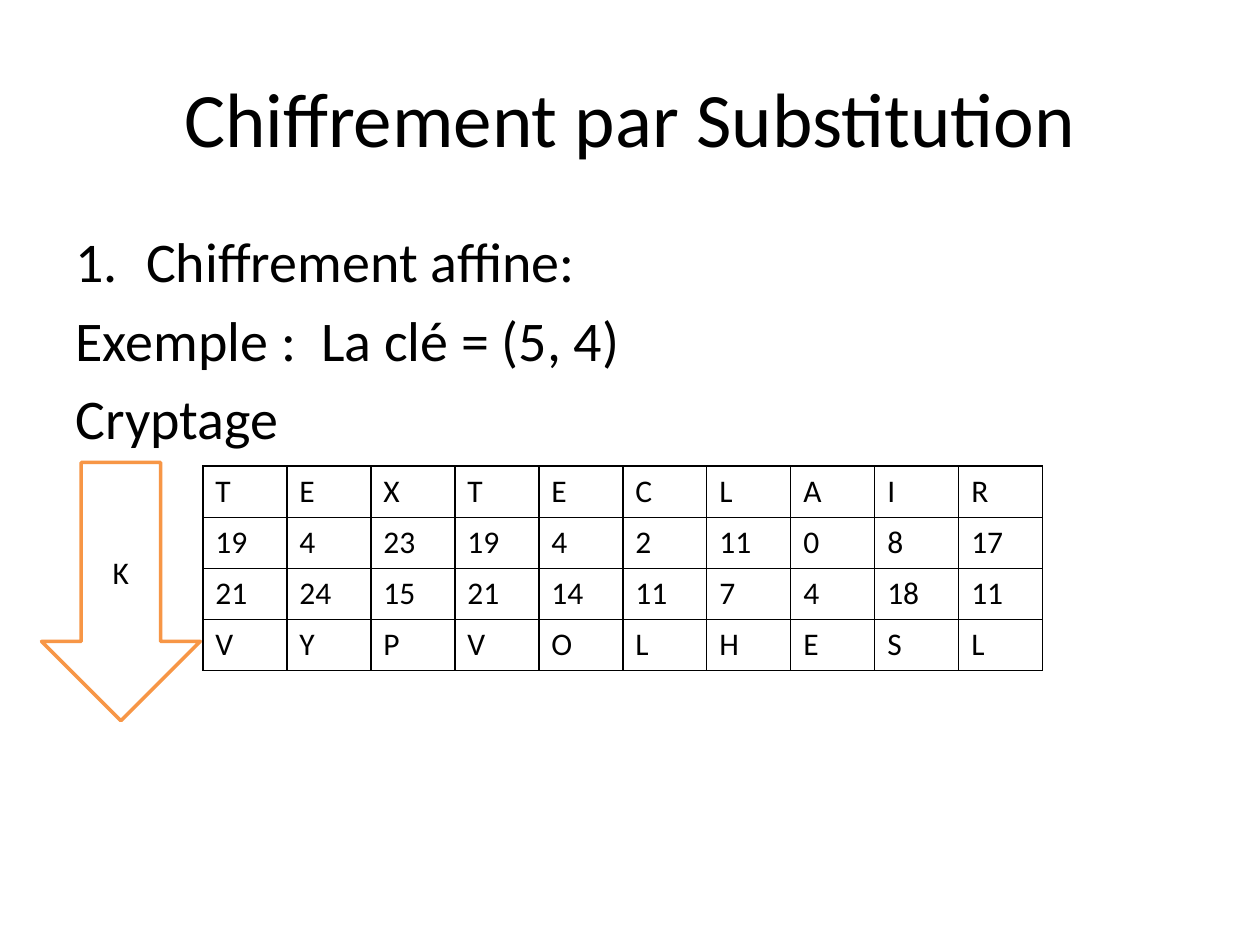
import pptx
import pptx.util
import pptx.dml.color
import pptx.enum.shapes
import pptx.enum.text
import pptx.oxml.ns
import lxml.etree

BLACK = pptx.dml.color.RGBColor(0x00, 0x00, 0x00)
WHITE = pptx.dml.color.RGBColor(0xFF, 0xFF, 0xFF)
ORANGE = pptx.dml.color.RGBColor(0xF7, 0x96, 0x46)
ALIGN = pptx.enum.text.PP_ALIGN
MIDDLE = pptx.enum.text.MSO_ANCHOR.MIDDLE
LINES = [("Chiffrement affine:", True), ("Exemple :  La clé = (5, 4)", False), ("Cryptage", False)]
ROWS = [
    "T E X T E C L A I R".split(),
    "19 4 23 19 4 2 11 0 8 17".split(),
    "21 24 15 21 14 11 7 4 18 11".split(),
    "V Y P V O L H E S L".split(),
]


def add(root, tag, **attrs):
    return lxml.etree.SubElement(root, pptx.oxml.ns.qn(tag), attrs)


def write(par, text, size=18, color=BLACK, face="Calibri", align=ALIGN.LEFT):
    par.text = text
    par.alignment = align
    par.font.size = pptx.util.Pt(size)
    par.font.name = face
    par.font.color.rgb = color


class Deck:
    """Hold the style and the current slide, placing things by shares of its size."""

    def __init__(self, width, height):
        self.file = pptx.Presentation()
        self.file.slide_width = pptx.util.Inches(width)
        self.file.slide_height = pptx.util.Inches(height)
        self.slide = self.file.slides.add_slide(self.file.slide_layouts[1])

    def box(self, left, top, width, height):
        wide, high = self.file.slide_width, self.file.slide_height
        return int(left * wide), int(top * high), int(width * wide), int(height * high)

    def place(self, shape, area):
        shape.left, shape.top, shape.width, shape.height = self.box(*area)

    def title(self, text, area):
        shape = self.slide.shapes.title
        self.place(shape, area)
        shape.text_frame.vertical_anchor = MIDDLE
        write(shape.text_frame.paragraphs[0], text, size=44, align=ALIGN.CENTER)

    def body(self, lines, area):
        shape = self.slide.placeholders[1]
        self.place(shape, area)
        frame = shape.text_frame
        for rank, (text, count) in enumerate(lines):
            par = frame.add_paragraph() if rank else frame.paragraphs[0]
            props = par._p.get_or_add_pPr()
            dent = pptx.util.Inches(0.56) if count else 0
            props.set("marL", str(dent))
            props.set("indent", str(-dent))
            if count:
                add(props, "a:buFont", typeface="+mj-lt")
                add(props, "a:buAutoNum", type="arabicPeriod")
            else:
                add(props, "a:buNone")
            write(par, text, size=32)
            if not rank:
                par.space_before = pptx.util.Pt(0)

    def table(self, rows, area):
        left, top, width, height = self.box(*area)
        high, wide = len(rows), len(rows[0])
        table = self.slide.shapes.add_table(high, wide, left, top, width, height).table
        table.first_row = table.horz_banding = False
        for col in table.columns:
            col.width = width // wide
        for row, texts in zip(table.rows, rows):
            row.height = height // high
            for cell, text in zip(row.cells, texts):
                write(cell.text_frame.paragraphs[0], text)
                self.edge(cell)
                cell.fill.background()

    def edge(self, cell):
        props = cell._tc.get_or_add_tcPr()
        for side in "LRTB":
            line = add(props, "a:ln" + side, w=str(pptx.util.Pt(1)))
            add(add(line, "a:solidFill"), "a:srgbClr", val=str(BLACK))

    def arrow(self, text, area):
        kind = pptx.enum.shapes.MSO_SHAPE.DOWN_ARROW
        shape = self.slide.shapes.add_shape(kind, *self.box(*area))
        shape.shadow.inherit = False
        shape.fill.solid()
        shape.fill.fore_color.rgb = WHITE
        shape.line.color.rgb = ORANGE
        shape.line.width = pptx.util.Pt(2)
        shape.text_frame.vertical_anchor = MIDDLE
        write(shape.text_frame.paragraphs[0], text, align=ALIGN.CENTER)


def main():
    deck = Deck(10, 7.5)
    deck.title("Chiffrement par Substitution", (0.05, 0.04, 0.9, 1 / 6))
    deck.body(LINES, (0.05, 7 / 30, 0.9, 0.66))
    deck.table(ROWS, (0.161, 3.7 / 7.5, 2 / 3, 1.62 / 7.5))
    deck.arrow("K", (0.033, 3.67 / 7.5, 0.126, 2.05 / 7.5))
    deck.file.save("out.pptx")


if __name__ == "__main__":
    main()
